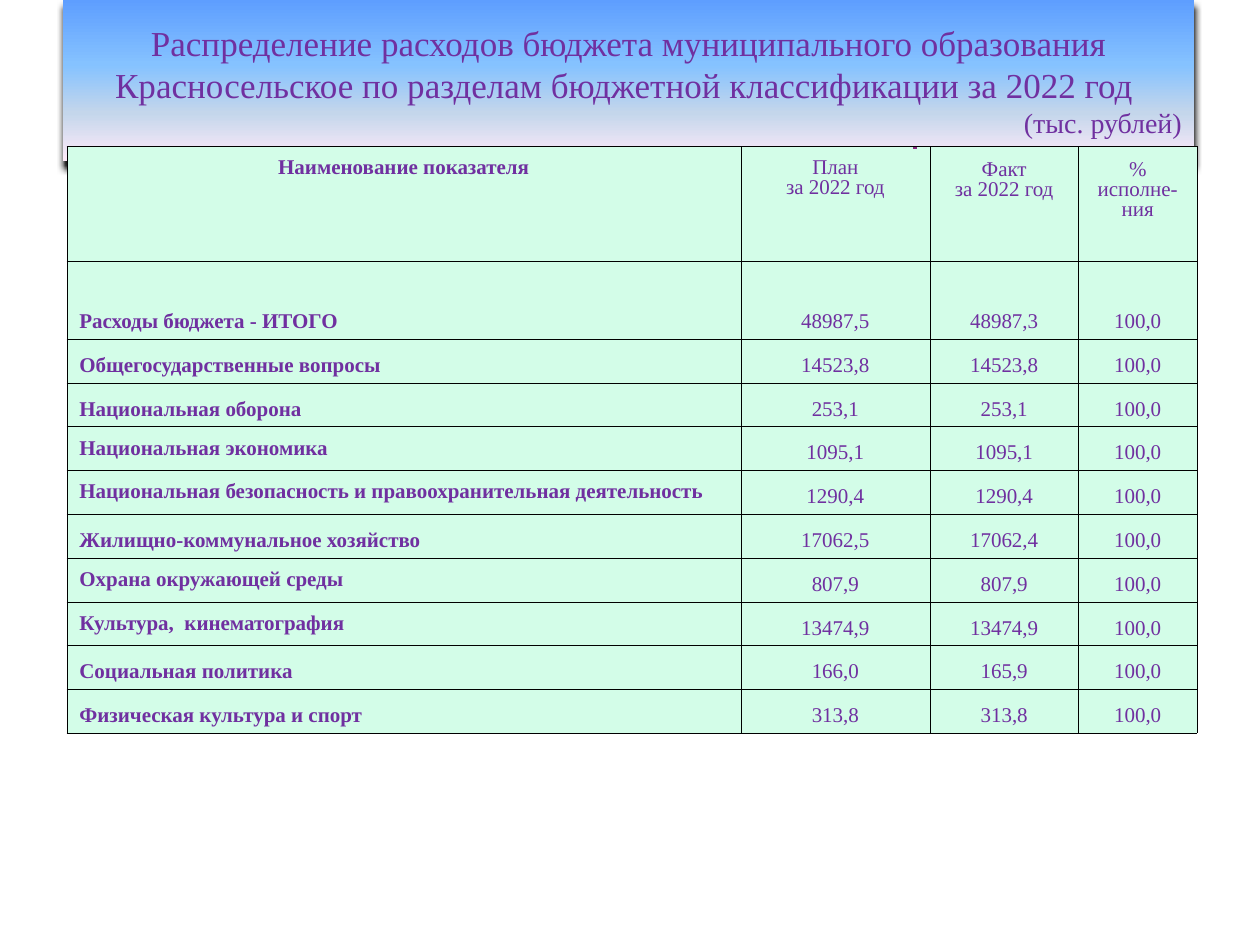
from lxml import etree
from pptx import Presentation
from pptx.dml.color import RGBColor
from pptx.enum.shapes import MSO_CONNECTOR
from pptx.enum.text import MSO_ANCHOR as Anchor, MSO_AUTO_SIZE, PP_ALIGN as Align
from pptx.oxml import parse_xml
from pptx.oxml.ns import nsdecls, qn
from pptx.util import Inches, Pt

TITLE = ("Распределение расходов бюджета муниципального образования "
         "Красносельское по разделам бюджетной классификации за 2022 год ")
UNITS = "(тыс. рублей)"
GRADIENT = [(0, "5E9EFF"), (40, "85C2FF"), (70, "C4D6EB"), (100, "FFEBFA")]

COLUMN_WIDTHS = [5.35, 1.5, 1.18, 0.94]
TABLE_HEIGHT, HEADER_HEIGHT, TOTAL_HEIGHT = 4.66, 0.91, 0.62
HEADER = ["Наименование показателя", "План\nза 2022 год", "Факт\nза 2022 год", "% исполне-ния"]
EXPENSES = [
    ("Расходы бюджета - ИТОГО", "48987,5", "48987,3", "100,0"),
    ("Общегосударственные вопросы", "14523,8", "14523,8", "100,0"),
    ("Национальная оборона", "253,1", "253,1", "100,0"),
    ("Национальная экономика", "1095,1", "1095,1", "100,0"),
    ("Национальная безопасность и правоохранительная деятельность",
     "1290,4", "1290,4", "100,0"),
    ("Жилищно-коммунальное хозяйство", "17062,5", "17062,4", "100,0"),
    ("Охрана окружающей среды", "807,9", "807,9", "100,0"),
    ("Культура,  кинематография", "13474,9", "13474,9", "100,0"),
    ("Социальная политика", "166,0", "165,9", "100,0"),
    ("Физическая культура и спорт", "313,8", "313,8", "100,0"),
]
TOP_ALIGNED_NAMES = {EXPENSES[i][0] for i in (3, 4, 6, 7)}


def color(value):
    return RGBColor.from_string(value)


class BudgetSlide:
    font = "Times New Roman"
    ink = "7030A0"
    cell_fill = "D3FDE8"
    border = "000000"

    def __init__(self, page):
        self.page = page

    def style(self, para, size, align, bold=False):
        para.alignment = align
        for span in para.runs:
            span.font.name = self.font
            span.font.size = Pt(size)
            span.font.bold = bold
            span.font.color.rgb = color(self.ink)

    def title(self, text, units, left, top, width, height):
        box = self.page.shapes.title
        box.left, box.top = Inches(left), Inches(top)
        box.width, box.height = Inches(width), Inches(height)
        stops = "".join(f'<a:gs pos="{pos * 1000}"><a:srgbClr val="{value}"/></a:gs>'
                        for pos, value in GRADIENT)
        properties = box.element.spPr
        properties.append(parse_xml(
            f'<a:gradFill {nsdecls("a")} rotWithShape="1"><a:gsLst>{stops}</a:gsLst>'
            '<a:lin ang="5400000" scaled="0"/></a:gradFill>'))
        properties.append(parse_xml(
            f'<a:effectLst {nsdecls("a")}><a:outerShdw blurRad="{Pt(4)}" dist="{Pt(4)}" '
            'dir="5400000" rotWithShape="0"><a:srgbClr val="000000"/>'
            '</a:outerShdw></a:effectLst>'))
        frame = box.text_frame
        frame.auto_size = MSO_AUTO_SIZE.NONE
        frame.word_wrap = True
        frame.vertical_anchor = Anchor.MIDDLE
        frame.text = f"{text}\n{units}"
        self.style(frame.paragraphs[0], 20, Align.CENTER)
        self.style(frame.paragraphs[1], 16, Align.RIGHT)

    def cell_borders(self, cell):
        properties = cell._tc.get_or_add_tcPr()
        for index, side in enumerate(("lnL", "lnR", "lnT", "lnB")):
            properties.insert(index, parse_xml(
                f'<a:{side} {nsdecls("a")} w="{Pt(0.11)}"><a:solidFill>'
                f'<a:srgbClr val="{self.border}"/></a:solidFill></a:{side}>'))

    def cell(self, cell, text, align, anchor, bold, margin_top):
        cell.fill.solid()
        cell.fill.fore_color.rgb = color(self.cell_fill)
        self.cell_borders(cell)
        cell.margin_left = cell.margin_right = Inches(0.1)
        cell.margin_top, cell.margin_bottom = Inches(margin_top), Inches(0.05)
        cell.vertical_anchor = anchor
        cell.text_frame.text = text
        for para in cell.text_frame.paragraphs:
            para.line_spacing = 0.86
            self.style(para, 12, align, bold)

    def table(self, left, top):
        rows = [HEADER, *EXPENSES]
        grid = self.page.shapes.add_table(
            len(rows), len(COLUMN_WIDTHS), Inches(left), Inches(top),
            Inches(sum(COLUMN_WIDTHS)), Inches(TABLE_HEIGHT)).table
        for column, width in zip(grid.columns, COLUMN_WIDTHS):
            column.width = Inches(width)
        sections = len(EXPENSES) - 1
        section_height = (TABLE_HEIGHT - HEADER_HEIGHT - TOTAL_HEIGHT) / sections
        heights = [HEADER_HEIGHT, TOTAL_HEIGHT] + [section_height] * sections
        for r, (values, height) in enumerate(zip(rows, heights)):
            grid.rows[r].height = Inches(height)
            for c, text in enumerate(values):
                at_top = r == 0 or text in TOP_ALIGNED_NAMES
                self.cell(grid.cell(r, c), text,
                          align=Align.LEFT if c == 0 and r > 0 else Align.CENTER,
                          anchor=Anchor.TOP if at_top else Anchor.BOTTOM,
                          bold=c == 0,
                          margin_top=0.11 if r == 0 and c > 1 else 0.1)

    def line(self, x1, y1, x2, y2, value, width):
        connector = self.page.shapes.add_connector(
            MSO_CONNECTOR.STRAIGHT, Inches(x1), Inches(y1), Inches(x2), Inches(y2))
        connector.line.color.rgb = color(value)
        connector.line.width = Pt(width)
        etree.SubElement(connector.element.spPr, qn("a:effectLst"))


def main():
    deck = Presentation()
    deck.slide_width, deck.slide_height = Inches(10), Inches(7.5)
    slide = BudgetSlide(deck.slides.add_slide(deck.slide_layouts[5]))
    slide.title(TITLE, UNITS, 0.5, 0, 8.98, 1.28)
    slide.table(0.53, 1.16)
    slide.line(7.26, 1.17, 7.26, 1.18, "83297F", 2)
    deck.save("out.pptx")


if __name__ == "__main__":
    main()
